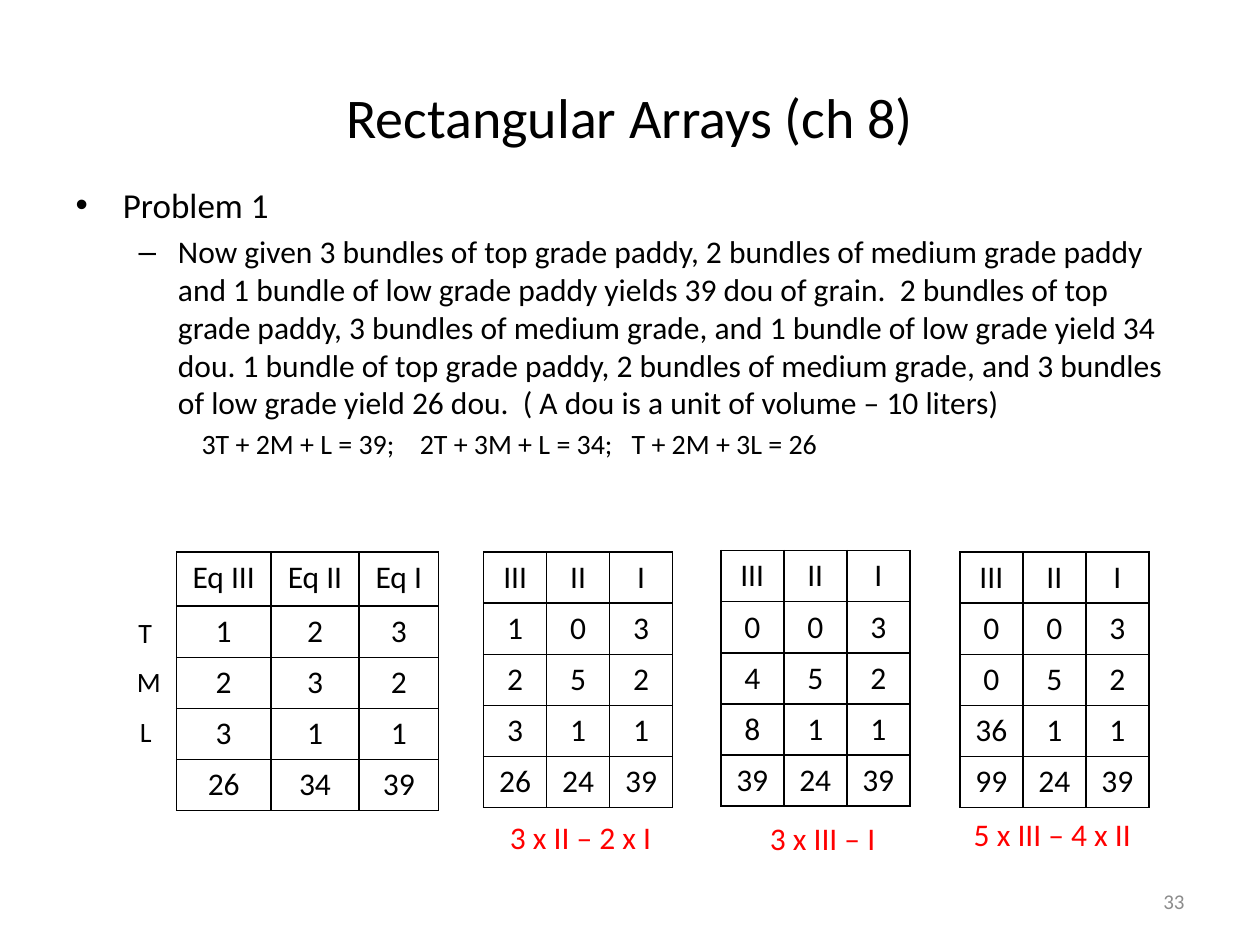
from dataclasses import dataclass

from lxml.etree import SubElement as Sub
from pptx import Presentation
from pptx.dml.color import RGBColor as Rgb
from pptx.enum.text import MSO_ANCHOR as Anchor, PP_ALIGN as Align
from pptx.oxml.ns import qn
from pptx.util import Cm, Pt


@dataclass(frozen=True)
class Theme:
    font: str = "Calibri"
    ink: str = "000000"
    red: str = "FF0000"
    gray: str = "8C8C8C"
    title: int = 32
    point: int = 20
    text: int = 18
    small: int = 16
    foot: int = 12


@dataclass(frozen=True)
class Label:
    text: str
    left: float
    top: float
    width: float
    height: float = 1.02
    size: int = Theme.text
    color: str = Theme.red
    align: Align = Align.LEFT
    anchor: Anchor = Anchor.TOP
    wrap: bool = False


@dataclass(frozen=True)
class Grid:
    left: float
    top: float
    rows: tuple
    cols: tuple = (1.27,) * 3
    head: float = 1.02
    row: float = 1.02


THEME = Theme()
NUMS = ("III", "II", "I")
GRIDS = (
    Grid(3.56, 11.13, (("Eq III", "Eq II", "Eq I"), (1, 2, 3), (2, 3, 2),
                       (3, 1, 1), (26, 34, 39)),
         cols=(1.9, 1.78, 1.6), head=1.09, row=1.03),
    Grid(9.75, 11.13, (NUMS, (1, 0, 3), (2, 5, 2), (3, 1, 1), (26, 24, 39)),
         head=1.03, row=1.03),
    Grid(14.53, 11.1, (NUMS, (0, 0, 3), (4, 5, 2), (8, 1, 1), (39, 24, 39))),
    Grid(19.35, 11.13, (NUMS, (0, 0, 3), (0, 5, 2), (36, 1, 1), (99, 24, 39))),
)
STEPS = (
    Label("3 x II – 2 x I", 10.03, 16.36, 3.4),
    Label("3 x III – I", 15.27, 16.38, 2.67),
    Label("5 x III – 4 x II", 19.38, 16.31, 3.71),
)
SIDES = tuple(
    Label(name, left, 12.29 + 0.99 * i, 0.81, 0.94, size=THEME.small,
          color=THEME.ink, wrap=True)
    for i, (name, left) in enumerate((("T", 2.54), ("M", 2.51), ("L", 2.57)))
)
FOOT = Label("33", 18.21, 17.65, 5.92, size=THEME.foot, color=THEME.gray,
             align=Align.RIGHT, anchor=Anchor.MIDDLE, wrap=True)
STORY = (
    "Now given 3 bundles of top grade paddy, 2 bundles of medium grade paddy "
    "and 1 bundle of low grade paddy yields 39 dou of grain.  2 bundles of top "
    "grade paddy, 3 bundles of medium grade, and 1 bundle of low grade yield 34 "
    "dou. 1 bundle of top grade paddy, 2 bundles of medium grade, and 3 bundles "
    "of low grade yield 26 dou.  ( A dou is a unit of volume – 10 liters)"
)
# Each equation part with the extra tracking, in points, of its characters.
SUMS = (("3T + 2M + L = 39;", 0), (" ", 10.8), ("2T + 3M + L = 34;", 0),
        (" ", 7.2), ("T + 2M + 3L = 26", 0))


def write(para, text: str, *, size: int = THEME.text, color: str = THEME.ink,
          align: Align | None = None, track: float = 0) -> None:
    """Add one formatted run to a paragraph."""
    run = para.add_run()
    run.text = text
    run.font.name = THEME.font
    run.font.size = Pt(size)
    run.font.color.rgb = Rgb.from_string(color)
    if align is not None:
        para.alignment = align
    if track:
        run.font._element.set("spc", str(round(track * 100)))


def place(shape, left: float, top: float, width: float, height: float) -> None:
    shape.left, shape.top = Cm(left), Cm(top)
    shape.width, shape.height = Cm(width), Cm(height)


def edge(cell) -> None:
    """Give a cell thin lines on all sides and no fill."""
    props = cell._tc.get_or_add_tcPr()
    for side in ("lnL", "lnR", "lnT", "lnB"):
        line = Sub(props, qn(f"a:{side}"), w=str(Pt(1)))
        fill = Sub(line, qn("a:solidFill"))
        Sub(fill, qn("a:srgbClr"), val=THEME.ink)
    cell.fill.background()


def draw_grid(slide, grid: Grid) -> None:
    highs = [grid.head] + [grid.row] * (len(grid.rows) - 1)
    table = slide.shapes.add_table(
        len(highs), len(grid.cols), Cm(grid.left), Cm(grid.top),
        Cm(sum(grid.cols)), Cm(sum(highs))).table
    table.first_row = table.horz_banding = False
    for col, width in zip(table.columns, grid.cols):
        col.width = Cm(width)
    for row, high, vals in zip(table.rows, highs, grid.rows):
        row.height = Cm(high)
        for cell, val in zip(row.cells, vals):
            edge(cell)
            write(cell.text_frame.paragraphs[0], str(val), align=Align.CENTER)


def draw_label(slide, label: Label) -> None:
    box = slide.shapes.add_textbox(Cm(label.left), Cm(label.top),
                                   Cm(label.width), Cm(label.height))
    frame = box.text_frame
    frame.word_wrap = label.wrap
    frame.vertical_anchor = label.anchor
    write(frame.paragraphs[0], label.text, size=label.size,
          color=label.color, align=label.align)


def fill_body(body) -> None:
    place(body, 1.27, 3.58, 22.86, 14)
    frame = body.text_frame
    write(frame.paragraphs[0], "Problem 1", size=THEME.point)
    story = frame.add_paragraph()
    story.level = 1
    write(story, STORY)
    sums = frame.add_paragraph()
    sums.level = 2
    Sub(sums._p.get_or_add_pPr(), qn("a:buNone"))
    for text, track in SUMS:
        write(sums, text, size=THEME.small, track=track)


def main() -> None:
    deck = Presentation()
    deck.slide_width, deck.slide_height = Cm(25.4), Cm(19.05)
    slide = deck.slides.add_slide(deck.slide_layouts[1])
    title, body = slide.placeholders
    place(title, 1.27, 0.76, 22.86, 3.18)
    write(title.text_frame.paragraphs[0], "Rectangular Arrays (ch 8)",
          size=THEME.title, align=Align.CENTER)
    fill_body(body)
    for grid in GRIDS:
        draw_grid(slide, grid)
    for label in (*STEPS, *SIDES, FOOT):
        draw_label(slide, label)
    deck.save("out.pptx")


if __name__ == "__main__":
    main()
